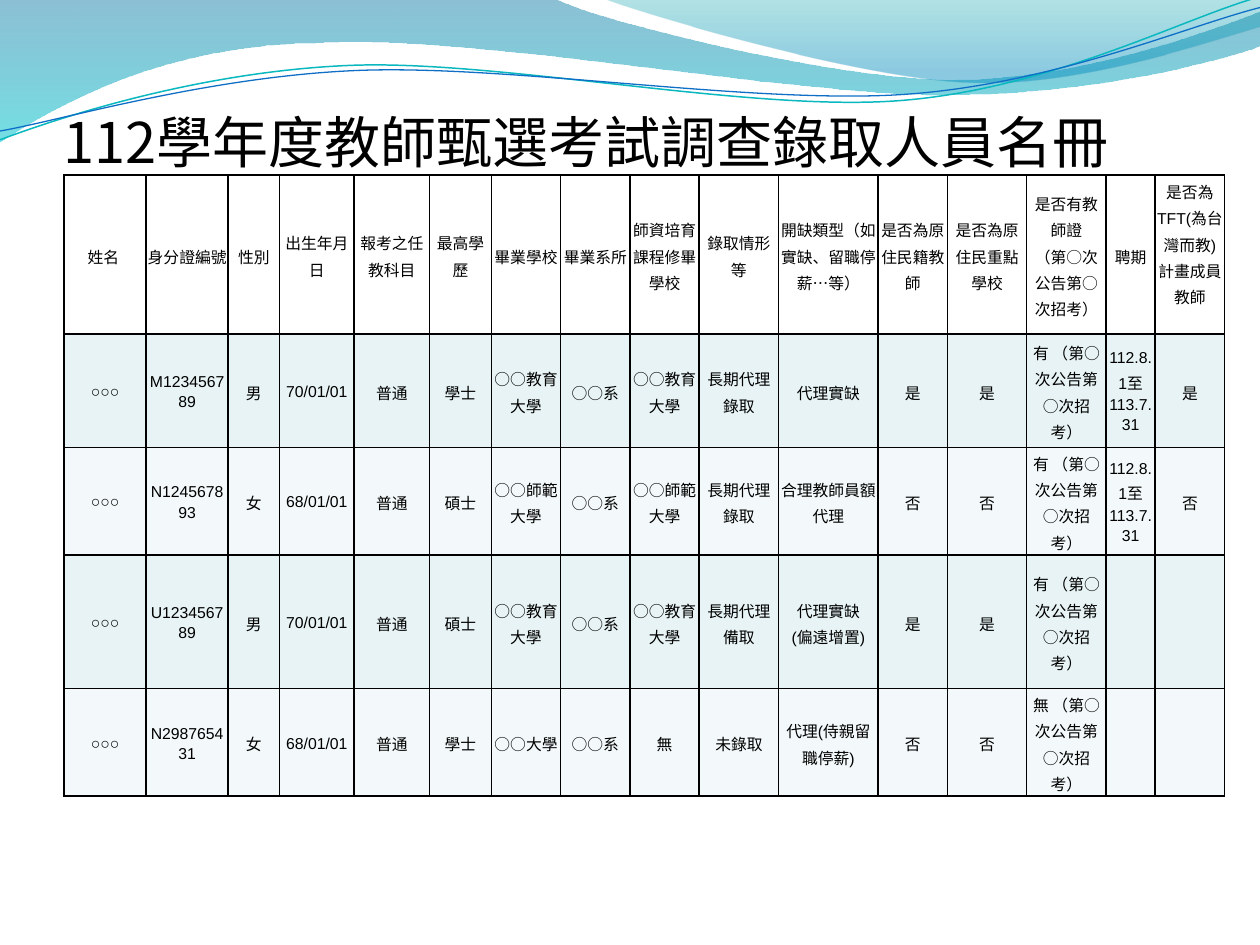
from lxml import etree
from pptx import Presentation
from pptx.dml.color import RGBColor
from pptx.enum.text import MSO_ANCHOR, MSO_AUTO_SIZE, PP_ALIGN
from pptx.oxml.ns import qn
from pptx.util import Inches, Pt

CENTER, LEFT = PP_ALIGN.CENTER, PP_ALIGN.LEFT
MIDDLE, BOTTOM = MSO_ANCHOR.MIDDLE, MSO_ANCHOR.BOTTOM

BLACK = RGBColor(0x00, 0x00, 0x00)
BAND_DARK = RGBColor(0xE7, 0xF3, 0xF4)
BAND_LIGHT = RGBColor(0xF3, 0xF9, 0xFA)
DEEP_BLUE = RGBColor(0x00, 0x74, 0xA1)
CYAN = RGBColor(0x00, 0xC6, 0xCF)
TEAL = RGBColor(0x00, 0xA1, 0xA9)
SKY = RGBColor(0x00, 0x8B, 0xBF)
TEAL_LINE = RGBColor(0x0A, 0xB8, 0xBF)
BLUE_LINE = RGBColor(0x0F, 0x6F, 0xC6)

TITLE = "112學年度教師甄選考試調查錄取人員名冊"
TITLE_FONT, TABLE_FONT = "Noto Sans CJK SC", "Arial"

HEADERS = ["姓名 ", "身分證編號", "性別", "出生年月日", "報考之任教科目", "最高學歷",
           "畢業學校", "畢業系所", "師資培育課程修畢學校", "錄取情形等",
           "開缺類型（如實缺、留職停薪…等）", "是否為原住民籍教師",
           "是否為原住民重點學校", "是否有教師證\n（第○次公告第○次招考）", "聘期",
           "是否為TFT(為台灣而教)計畫成員教師"]
ROUND = " （第○次公告第○次招考）"
TERM = "112.8.1至113.7.31"
CANDIDATES = [
    ["○○○", "M123456789", "男", "70/01/01", "普通", "學士", "○○教育大學", "○○系",
     "○○教育大學", "長期代理錄取", "代理實缺", "是", "是", "有" + ROUND, TERM, "是"],
    ["○○○", "N124567893", "女", "68/01/01", "普通", "碩士", "○○師範大學", "○○系",
     "○○師範大學", "長期代理錄取", "合理教師員額代理", "否", "否", "有" + ROUND, TERM, "否"],
    ["○○○", "U123456789", "男", "70/01/01", "普通", "碩士", "○○教育大學", "○○系",
     "○○教育大學", "長期代理備取", "代理實缺\v(偏遠增置)", "是", "是", "有" + ROUND, "", ""],
    ["○○○", "N298765431", "女", "68/01/01", "普通", "學士", "○○大學", "○○系",
     "無", "未錄取", "代理(侍親留職停薪)", "否", "否", "無" + ROUND, "", ""],
]
COLUMN_WIDTHS = [0.65, 0.65, 0.41, 0.59, 0.6, 0.49, 0.55, 0.55,
                 0.55, 0.63, 0.79, 0.55, 0.63, 0.63, 0.39, 0.55]
ROW_HEIGHTS = [1.26, 0.9, 0.84, 1.06, 0.81]

# Segments hold one point for a straight line, three for a cubic curve.
# Gradient stops: position, colour, opacity in percent.
WAVES = [
    {"start": (0, -0.01),
     "segments": [[(4.4, -0.01)],
                  [(4.76, 0.17), (6.64, 0.63), (7.58, 0.63)],
                  [(8.53, 0.63), (9.58, 0.26), (10, 0.09)],
                  [(10.01, 0.36)],
                  [(9.83, 0.44), (8.7, 0.76), (7.46, 0.75)],
                  [(6.22, 0.75), (3.82, 0.28), (2.57, 0.34)],
                  [(1.29, 0.35), (0.46, 0.83), (-0.01, 1.13)],
                  [(0, -0.01)]],
     "stops": [(0, DEEP_BLUE, 45), (1, CYAN, 55)]},
    {"start": (4.79, -0.01),
     "segments": [[(5.09, 0.11), (6.82, 0.62), (7.69, 0.65)],
                  [(8.56, 0.69), (9.61, 0.32), (10, 0.21)],
                  [(10, 0)],
                  [(4.79, -0.01)]],
     "stops": [(0, TEAL, 30), (0.8, SKY, 45)]},
    {"start": (0, 1.11),
     "segments": [[(0.48, 0.93), (1.58, 0.57), (2.77, 0.52)],
                  [(3.95, 0.47), (5.93, 0.89), (7.13, 0.8)],
                  [(8.33, 0.71), (9.38, 0.15), (9.98, -0.02)]],
     "line": (TEAL_LINE, 0.85)},
    {"start": (0, 1.04),
     "segments": [[(0.47, 0.96), (1.64, 0.61), (2.83, 0.56)],
                  [(4.03, 0.51), (5.97, 0.83), (7.17, 0.75)],
                  [(8.36, 0.67), (9.41, 0.21), (10, 0.06)]],
     "line": (BLUE_LINE, 0.75)},
]


def set_attributes(target, values):
    for name, value in values.items():
        setattr(target, name, value)


def bend_segments(shape, segments):
    """Merge the three straight lines of each curved segment into one cubic curve."""
    lines = iter(list(shape._element.iter(qn("a:lnTo"))))
    for segment in segments:
        parts = [next(lines) for _ in segment]
        if len(parts) == 3:
            curve = etree.Element(qn("a:cubicBezTo"))
            parts[0].addprevious(curve)
            for part in parts:
                curve.append(part[0])
                part.getparent().remove(part)


def add_wave(slide, wave):
    points = [wave["start"]] + [p for segment in wave["segments"] for p in segment]
    points = [(Inches(x), Inches(y)) for x, y in points]
    builder = slide.shapes.build_freeform(*points[0])
    builder.add_line_segments(points[1:], close="stops" in wave)
    shape = builder.convert_to_shape()
    bend_segments(shape, wave["segments"])
    shape.shadow.inherit = False
    if "line" in wave:
        color, width = wave["line"]
        shape.fill.background()
        shape.line.color.rgb, shape.line.width = color, Pt(width)
        return
    shape.line.fill.background()
    shape.fill.gradient()
    shape.fill.gradient_angle = 270
    for stop, (position, color, _) in zip(shape.fill.gradient_stops, wave["stops"]):
        stop.position, stop.color.rgb = position, color
    colors = shape._element.spPr.iter(qn("a:srgbClr"))
    for element, (_, _, opacity) in zip(list(colors), wave["stops"]):
        etree.SubElement(element, qn("a:alpha"), val=str(opacity * 1000))


def add_borders(cell):
    properties = cell._tc.get_or_add_tcPr()
    for side in ("lnL", "lnR", "lnT", "lnB"):
        line = etree.SubElement(properties, qn(f"a:{side}"), w=str(Pt(1)))
        fill = etree.SubElement(line, qn("a:solidFill"))
        etree.SubElement(fill, qn("a:srgbClr"), val=str(BLACK))


def format_title(title):
    set_attributes(title, {"left": Inches(0.5), "top": Inches(0.77),
                           "width": Inches(9), "height": Inches(0.62)})
    frame = title.text_frame
    frame.text = TITLE
    set_attributes(frame, {"margin_left": 0, "margin_right": 0, "margin_bottom": 0,
                           "margin_top": Inches(0.05), "vertical_anchor": BOTTOM,
                           "auto_size": MSO_AUTO_SIZE.NONE, "word_wrap": True})
    frame.paragraphs[0].alignment = LEFT
    run = frame.paragraphs[0].runs[0]
    set_attributes(run.font, {"name": TITLE_FONT, "size": Pt(32)})
    run.font.color.rgb = BLACK
    etree.SubElement(run._r.get_or_add_rPr(), qn("a:ea"), typeface=TITLE_FONT)


def fill_cell(cell, text, band):
    add_borders(cell)
    if band is None:
        cell.fill.background()
    else:
        cell.fill.solid()
        cell.fill.fore_color.rgb = band
    margin = Inches(0.01)
    set_attributes(cell, {"text": text, "vertical_anchor": MIDDLE,
                          "margin_left": margin, "margin_right": margin,
                          "margin_top": margin, "margin_bottom": margin})
    for paragraph in cell.text_frame.paragraphs:
        set_attributes(paragraph, {"alignment": CENTER, "line_spacing": 1.15})
        for run in paragraph.runs:
            set_attributes(run.font, {"name": TABLE_FONT, "size": Pt(9), "bold": False})
            run.font.color.rgb = BLACK


def add_roster(slide):
    rows = [HEADERS] + CANDIDATES
    table = slide.shapes.add_table(
        len(rows), len(HEADERS), Inches(0.51), Inches(1.39),
        Inches(sum(COLUMN_WIDTHS)), Inches(sum(ROW_HEIGHTS))).table
    set_attributes(table, {"first_row": False, "horz_banding": False})
    for column, width in zip(table.columns, COLUMN_WIDTHS):
        column.width = Inches(width)
    for r, (texts, height) in enumerate(zip(rows, ROW_HEIGHTS)):
        table.rows[r].height = Inches(height)
        band = None if r == 0 else (BAND_LIGHT, BAND_DARK)[r % 2]
        for c, text in enumerate(texts):
            fill_cell(table.cell(r, c), text, band)
    table.cell(0, len(HEADERS) - 1).margin_bottom = Inches(0.2)


def main():
    prs = Presentation()
    prs.slide_width, prs.slide_height = Inches(10), Inches(7.5)
    slide = prs.slides.add_slide(prs.slide_layouts[5])
    for wave in WAVES:
        add_wave(slide, wave)
    title = slide.shapes.title
    slide.shapes._spTree.append(title._element)  # in front of the waves
    format_title(title)
    add_roster(slide)
    prs.save("out.pptx")


if __name__ == "__main__":
    main()
